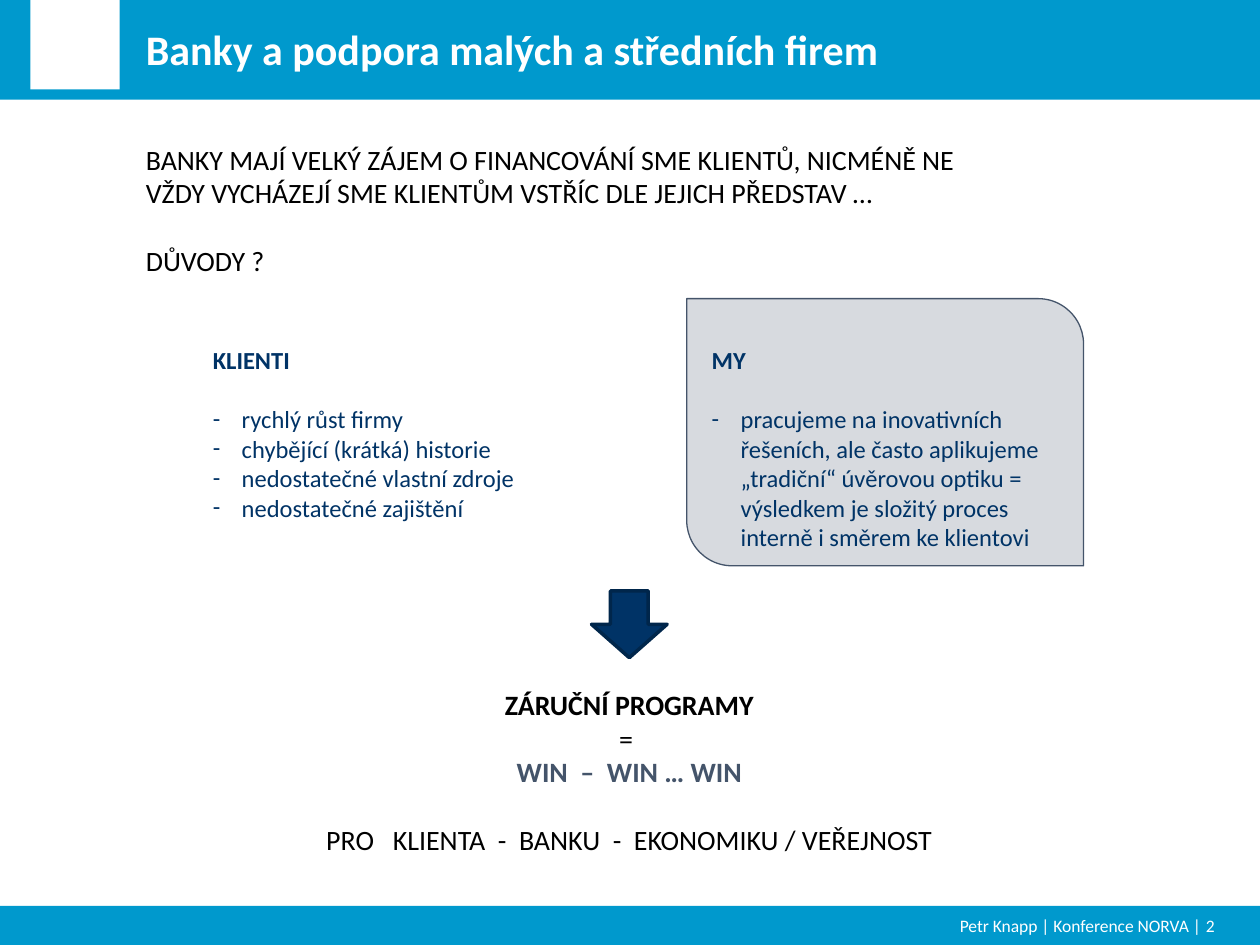
from lxml import etree
from pptx import Presentation
from pptx.dml.color import RGBColor
from pptx.enum.shapes import MSO_SHAPE as Preset
from pptx.enum.text import MSO_ANCHOR as Anchor, PP_ALIGN as Align
from pptx.oxml.ns import qn
from pptx.util import Inches, Pt

SKY = RGBColor(0x00, 0x99, 0xCD)
NAVY = RGBColor(0x00, 0x33, 0x66)
DARK_NAVY = RGBColor(0x00, 0x26, 0x4B)
SLATE = RGBColor(0x44, 0x54, 0x6A)
WHITE = RGBColor(0xFF, 0xFF, 0xFF)
BLACK = RGBColor(0x00, 0x00, 0x00)
FONT = "Calibri"


def add_block(slide, preset, box, fill, line=None, line_width=0):
    shape = slide.shapes.add_shape(preset, *map(Inches, box))
    shape.shadow.inherit = False
    shape.fill.solid()
    shape.fill.fore_color.rgb = fill
    if line is None:
        shape.line.fill.background()
    else:
        shape.line.color.rgb = line
        shape.line.width = Pt(line_width)
    return shape


def set_opacity(shape, percent):
    color = shape._element.spPr.find(qn("a:solidFill"))[0]
    etree.SubElement(color, qn("a:alpha")).set("val", str(percent * 1000))


def add_text_frame(slide, box, wrap=True):
    frame = slide.shapes.add_textbox(*map(Inches, box)).text_frame
    frame.word_wrap = wrap
    return frame


def add_line(frame, text, size, color, bold=False, align=Align.LEFT, before=0, bullet=False):
    first = frame.paragraphs[0]
    paragraph = frame.add_paragraph() if first.runs else first
    paragraph.alignment = align
    if before:
        paragraph.space_before = Pt(before)
    if bullet:
        properties = paragraph._p.get_or_add_pPr()
        properties.set("marL", str(Inches(0.23)))
        properties.set("indent", str(Inches(-0.23)))
        etree.SubElement(properties, qn("a:buFont")).set("typeface", FONT)
        etree.SubElement(properties, qn("a:buChar")).set("char", "-")
    run = paragraph.add_run()
    run.text = text
    run.font.name = FONT
    run.font.size = Pt(size)
    run.font.bold = bold
    run.font.color.rgb = color


def add_header(slide, box):
    left, top, width, height = box
    add_block(slide, Preset.RECTANGLE, box, SKY)
    add_block(slide, Preset.RECTANGLE, (left + 0.24, top, 0.71, 0.71), WHITE)
    frame = add_text_frame(slide, (left + 1.06, top + 0.14, 6.07, 0.5), wrap=False)
    add_line(frame, "Banky a podpora malých a středních firem", 24, WHITE, bold=True)


def add_intro(slide, box):
    frame = add_text_frame(slide, box)
    add_line(frame, "BANKY MAJÍ VELKÝ ZÁJEM O FINANCOVÁNÍ SME KLIENTŮ, NICMÉNĚ NE VŽDY "
             "VYCHÁZEJÍ SME KLIENTŮM VSTŘÍC DLE JEJICH PŘEDSTAV …", 16, BLACK)
    add_line(frame, "DŮVODY ?", 16, BLACK, before=19.5)


def add_reasons(slide, box, heading, reasons):
    frame = add_text_frame(slide, box)
    add_line(frame, heading, 14, NAVY, bold=True)
    for index, reason in enumerate(reasons):
        add_line(frame, reason, 14, NAVY, before=0 if index else 17, bullet=True)


def add_panel(slide, box):
    panel = add_block(slide, Preset.ROUND_2_DIAG_RECTANGLE, box, SLATE, SLATE, 0.75)
    panel.adjustments[0] = 0
    panel.adjustments[1] = 0.17
    set_opacity(panel, 21)


def add_conclusion(slide, box):
    left, top, width, height = box
    arrow_box = (left + (width - 0.6) / 2, top, 0.6, 0.53)
    add_block(slide, Preset.DOWN_ARROW, arrow_box, NAVY, DARK_NAVY, 2)
    frame = add_text_frame(slide, (left, top + 0.72, width, height - 0.72))
    add_line(frame, "ZÁRUČNÍ PROGRAMY", 16, BLACK, bold=True, align=Align.CENTER)
    add_line(frame, "= ", 16, BLACK, align=Align.CENTER)
    add_line(frame, "WIN  –  WIN … WIN", 16, SLATE, bold=True, align=Align.CENTER)
    add_line(frame, "PRO   KLIENTA  -  BANKU  -  EKONOMIKU / VEŘEJNOST", 16, BLACK,
             align=Align.CENTER, before=19.5)


def add_footer(slide, box):
    left, top, width, height = box
    add_block(slide, Preset.RECTANGLE, box, SKY)
    cells = (
        (0.36, 9.17, "Petr Knapp | Konference NORVA |", Align.RIGHT),
        (9.57, 0.35, "2", Align.LEFT),
    )
    for offset, cell_width, text, align in cells:
        frame = add_text_frame(slide, (left + offset, top, cell_width, height))
        frame.margin_left = frame.margin_right = frame.margin_top = frame.margin_bottom = 0
        frame.vertical_anchor = Anchor.MIDDLE
        add_line(frame, text, 10, WHITE, align=align)


def main():
    presentation = Presentation()
    presentation.slide_width = Inches(10)
    presentation.slide_height = Inches(7.5)
    slide = presentation.slides.add_slide(presentation.slide_layouts[6])
    add_footer(slide, (0, 7.19, 10, 0.31))
    add_header(slide, (0, 0, 10, 0.79))
    add_panel(slide, (5.45, 2.37, 3.15, 2.12))
    add_reasons(slide, (1.59, 2.69, 2.95, 1.28), "KLIENTI", (
        "rychlý růst firmy",
        "chybějící (krátká) historie",
        "nedostatečné vlastní zdroje",
        "nedostatečné zajištění",
    ))
    add_intro(slide, (1.06, 1.08, 6.88, 1.41))
    add_reasons(slide, (5.55, 2.69, 2.95, 1.51), "MY", (
        "pracujeme na inovativních řešeních, ale často aplikujeme „tradiční“ "
        "úvěrovou optiku = výsledkem je složitý proces interně i směrem ke klientovi",
    ))
    add_conclusion(slide, (2.16, 4.69, 5.67, 2.17))
    presentation.save("out.pptx")


if __name__ == "__main__":
    main()
